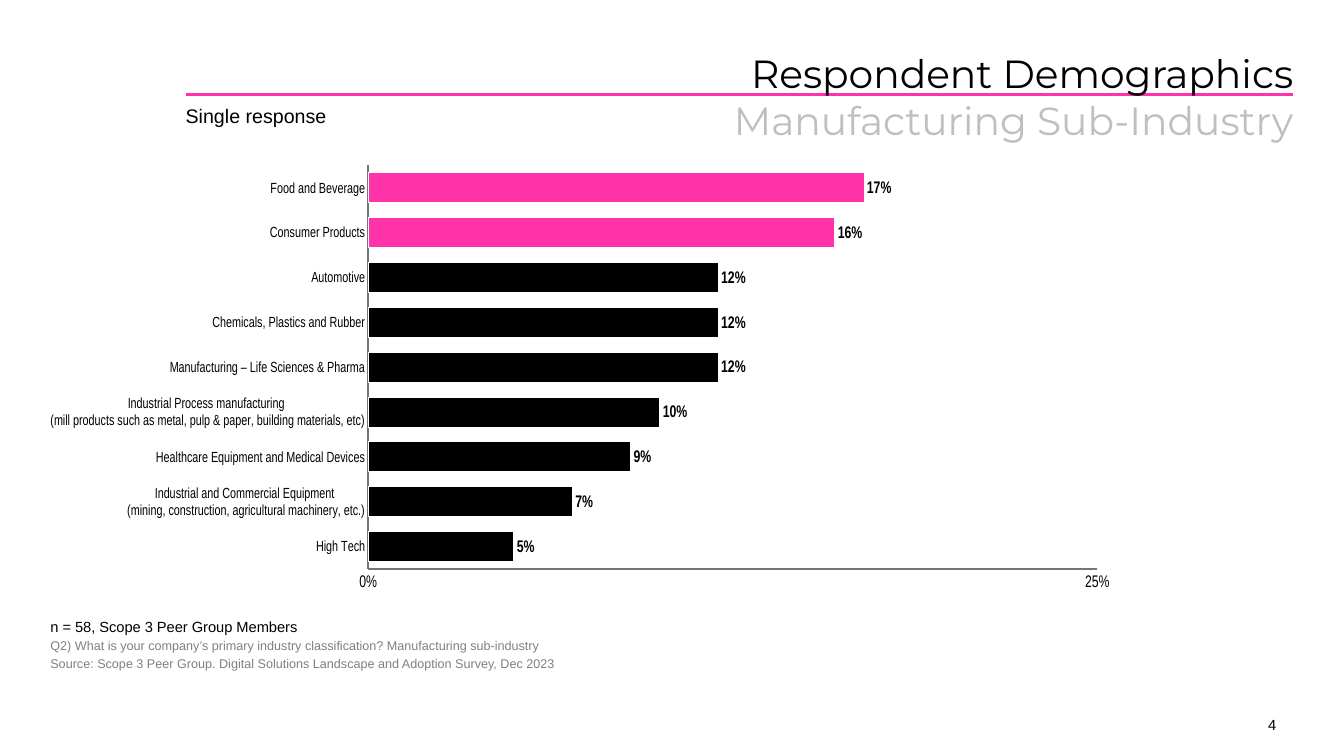
"""Build the respondent demographics slide with its sub-industry bar chart."""
from dataclasses import dataclass

import lxml.etree
import pptx
import pptx.chart.data
import pptx.dml.color
import pptx.enum.chart
import pptx.enum.shapes
import pptx.enum.text
import pptx.oxml
import pptx.oxml.ns
import pptx.util

BLACK, PINK, WHITE = "000000", "FF32A9", "FFFFFF"
GREY, SILVER, AXIS_GREY = "808080", "BFBFBF", "6F7878"
LEFT, RIGHT = pptx.enum.text.PP_ALIGN.LEFT, pptx.enum.text.PP_ALIGN.RIGHT
TOP, BOTTOM = pptx.enum.text.MSO_ANCHOR.TOP, pptx.enum.text.MSO_ANCHOR.BOTTOM

INDUSTRIES = {
    "Food and Beverage": 0.17,
    "Consumer Products": 0.16,
    "Automotive": 0.12,
    "Chemicals, Plastics and Rubber": 0.12,
    "Manufacturing – Life Sciences & Pharma": 0.12,
    "Industrial Process manufacturing \n"
    "(mill products such as metal, pulp & paper, building materials, etc)": 0.1,
    "Healthcare Equipment and Medical Devices": 0.09,
    "Industrial and Commercial Equipment \n"
    "(mining, construction, agricultural machinery, etc.)": 0.07,
    "High Tech": 0.05,
}
HIGHLIGHTED = 2
PLOT_LAYOUT = {"x": 0.046, "y": 0, "w": 0.937, "h": 0.865}


@dataclass
class Line:
    text: str
    size: float
    color: str = BLACK
    font: str = "Arial"


@dataclass
class TextBlock:
    left: float
    top: float
    width: float
    height: float
    lines: list[Line]
    align: int = LEFT
    anchor: int = TOP
    inset: float = 0
    gap: float = 0


TEXT_BLOCKS = [
    TextBlock(31.45, 18.03, 0.71, 0.46, [Line("4", 10.5)], RIGHT, BOTTOM),
    TextBlock(4.68, 1.24, 27.91, 1.24, [
        Line("Respondent Demographics", 28, BLACK, "Montserrat"),
        Line("Manufacturing Sub-Industry", 28, SILVER, "Montserrat"),
    ], RIGHT),
    TextBlock(1.27, 15.27, 20.32, 1.9, [
        Line("n = 58, Scope 3 Peer Group Members", 10.5),
        Line("Q2) What is your company’s primary industry classification? "
             "Manufacturing sub-industry", 9, GREY),
        Line("Source: Scope 3 Peer Group. Digital Solutions Landscape and "
             "Adoption Survey, Dec 2023", 9, GREY),
    ], anchor=BOTTOM, inset=0.25, gap=2),
    TextBlock(4.68, 2.36, 18.34, 1.12, [Line("Single response", 14)], inset=0.25),
]


def rgb(color: str) -> pptx.dml.color.RGBColor:
    """Turn a hex string into a colour."""
    return pptx.dml.color.RGBColor.from_string(color)


def style_font(font, size: float, color: str = BLACK, name: str = "Arial") -> None:
    """Set the size, colour and typeface of a font."""
    font.size = pptx.util.Pt(size)
    font.name = name
    font.color.rgb = rgb(color)


def style_line(line, color: str, width: float) -> None:
    """Set the colour and width of a line."""
    line.color.rgb = rgb(color)
    line.width = pptx.util.Pt(width)


def add_text(page, block: TextBlock) -> None:
    """Draw one text block, one paragraph a line."""
    box = page.shapes.add_textbox(*map(
        pptx.util.Cm, (block.left, block.top, block.width, block.height)))
    frame = box.text_frame
    frame.word_wrap = True
    frame.vertical_anchor = block.anchor
    frame.margin_left = 0
    frame.margin_top = frame.margin_right = frame.margin_bottom = pptx.util.Cm(block.inset)
    for index, line in enumerate(block.lines):
        para = frame.add_paragraph() if index else frame.paragraphs[0]
        para.alignment = block.align
        if index:
            para.space_before = pptx.util.Pt(block.gap)
        span = para.add_run()
        span.text = line.text
        style_font(span.font, line.size, line.color, line.font)


def add_rule(page) -> None:
    """Draw the pink rule through the title."""
    rule = page.shapes.add_connector(
        pptx.enum.shapes.MSO_CONNECTOR.STRAIGHT,
        *map(pptx.util.Cm, (4.68, 2.39, 32.59, 2.39)))
    style_line(rule.line, PINK, 2)
    lxml.etree.SubElement(rule._element.spPr, pptx.oxml.ns.qn("a:effectLst"))


def style_axis(axis, size: float) -> None:
    """Give an axis its line and label style."""
    axis.has_major_gridlines = False
    axis.major_tick_mark = axis.minor_tick_mark = pptx.enum.chart.XL_TICK_MARK.NONE
    style_line(axis.format.line, AXIS_GREY, 1.57)
    style_font(axis.tick_labels.font, size)


def place_plot(chart) -> None:
    """Fix the inner plot area and put the value axis after the last category."""
    area = chart._chartSpace.chart.plotArea
    for old in area.findall(pptx.oxml.ns.qn("c:layout")):
        area.remove(old)
    modes = '<c:xMode val="edge"/><c:yMode val="edge"/>'
    sizes = "".join(f'<c:{key} val="{value}"/>' for key, value in PLOT_LAYOUT.items())
    area.insert(0, pptx.oxml.parse_xml(
        f'<c:layout {pptx.oxml.ns.nsdecls("c")}><c:manualLayout>'
        f'<c:layoutTarget val="inner"/>{modes}{sizes}</c:manualLayout></c:layout>'))
    area.find(pptx.oxml.ns.qn("c:valAx")).find(pptx.oxml.ns.qn("c:crosses")).set("val", "max")


def add_industry_chart(page) -> None:
    """Draw the bar chart of respondents by sub-industry."""
    data = pptx.chart.data.CategoryChartData(number_format="0%")
    data.categories = list(INDUSTRIES)
    data.add_series("Series 1", list(INDUSTRIES.values()))
    chart = page.shapes.add_chart(
        pptx.enum.chart.XL_CHART_TYPE.BAR_CLUSTERED,
        *map(pptx.util.Cm, (1.27, 4.14, 26.72, 11.79)), data).chart
    chart.has_legend = chart.has_title = False
    style_font(chart.font, 12)
    place_plot(chart)

    style_axis(chart.category_axis, 10.5)
    chart.category_axis.reverse_order = True
    values = chart.value_axis
    style_axis(values, 12)
    values.minimum_scale, values.maximum_scale, values.major_unit = 0, 0.25, 0.25
    values.tick_labels.number_format = "0%"
    values.tick_labels.number_format_is_linked = False

    plot = chart.plots[0]
    plot.gap_width = 50
    plot.vary_by_categories = False
    bars = plot.series[0]
    bars.invert_if_negative = False
    highlights = [bars.points[index] for index in range(HIGHLIGHTED)]
    for part, color in [(bars, BLACK), *((point, PINK) for point in highlights)]:
        part.format.fill.solid()
        part.format.fill.fore_color.rgb = rgb(color)
        style_line(part.format.line, WHITE, 1)
    labels = bars.data_labels
    labels.show_value = True
    labels.position = pptx.enum.chart.XL_LABEL_POSITION.OUTSIDE_END
    labels.number_format = "0%"
    labels.number_format_is_linked = False
    style_font(labels.font, 12)
    labels.font.bold = True


def main() -> None:
    """Build and save the slide."""
    deck = pptx.Presentation()
    deck.slide_width, deck.slide_height = pptx.util.Cm(33.87), pptx.util.Cm(19.05)
    page = deck.slides.add_slide(deck.slide_layouts[6])
    add_rule(page)
    add_industry_chart(page)
    for block in TEXT_BLOCKS:
        add_text(page, block)
    deck.save("out.pptx")


if __name__ == "__main__":
    main()
